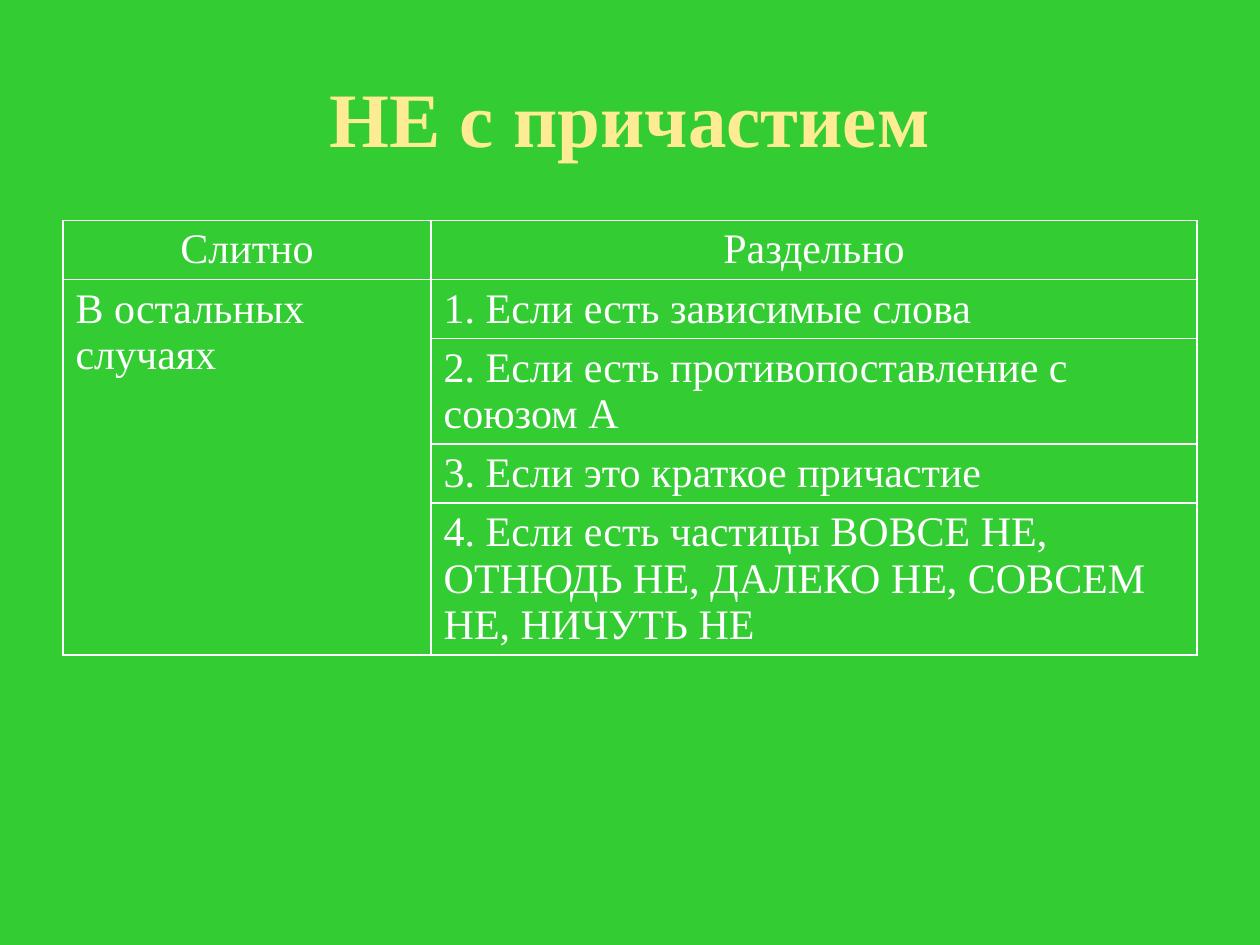
from lxml import etree
from pptx import Presentation
from pptx.dml.color import RGBColor
from pptx.enum.text import MSO_ANCHOR, PP_ALIGN
from pptx.oxml.ns import qn
from pptx.util import Cm, Pt

LEFT, CENTER = PP_ALIGN.LEFT, PP_ALIGN.CENTER
MIDDLE = MSO_ANCHOR.MIDDLE
TITLE_ONLY = 5
GREEN, CREAM, WHITE = "33CC33", "FEEC94", "FFFFFF"


def color(hex_code):
    return RGBColor.from_string(hex_code)


def write(frame, text, size=24, hex_code=WHITE, bold=False, align=LEFT):
    para = frame.paragraphs[0]
    para.alignment = align
    span = para.add_run()
    span.text = text
    span.font.name = "Times New Roman"
    span.font.size = Pt(size)
    span.font.bold = bold
    span.font.color.rgb = color(hex_code)


deck = Presentation()
deck.slide_width, deck.slide_height = Cm(25.4), Cm(19.05)
page = deck.slides.add_slide(deck.slide_layouts[TITLE_ONLY])
page.background.fill.solid()
page.background.fill.fore_color.rgb = color(GREEN)

# Title
title = page.shapes.title
title.left, title.top, title.width, title.height = Cm(1.27), Cm(0.76), Cm(22.86), Cm(3.18)
title.text_frame.vertical_anchor = MIDDLE
write(title.text_frame, "НЕ с причастием", size=44, hex_code=CREAM, bold=True, align=CENTER)

# Table of spelling rules
rows = [
    ("Слитно", "Раздельно"),
    ("В остальных случаях", "1. Если есть зависимые слова"),
    ("", "2. Если есть противопоставление с союзом А"),
    ("", "3. Если это краткое причастие"),
    ("", "4. Если есть частицы ВОВСЕ НЕ, ОТНЮДЬ НЕ, ДАЛЕКО НЕ, СОВСЕМ НЕ, НИЧУТЬ НЕ"),
]
column_widths = [7.42, 15.44]
row_heights = [1.19, 1.19, 2.13, 1.19, 3.06]

table = page.shapes.add_table(
    len(rows), len(column_widths), Cm(1.27), Cm(4.44),
    Cm(sum(column_widths)), Cm(sum(row_heights)),
).table
table.first_row = table.horz_banding = False
for column, width in zip(table.columns, column_widths):
    column.width = Cm(width)
for row, height in zip(table.rows, row_heights):
    row.height = Cm(height)
table.cell(1, 0).merge(table.cell(len(rows) - 1, 0))

for row_index, texts in enumerate(rows):
    for column_index, text in enumerate(texts):
        cell = table.cell(row_index, column_index)
        if text:
            write(cell.text_frame, text, align=LEFT if row_index else CENTER)
        properties = cell._tc.get_or_add_tcPr()
        for side in ("lnL", "lnR", "lnT", "lnB"):
            border = etree.SubElement(properties, qn(f"a:{side}"), w=str(Pt(1)))
            fill = etree.SubElement(border, qn("a:solidFill"))
            etree.SubElement(fill, qn("a:srgbClr"), val=WHITE)
        cell.fill.background()

deck.save("out.pptx")
